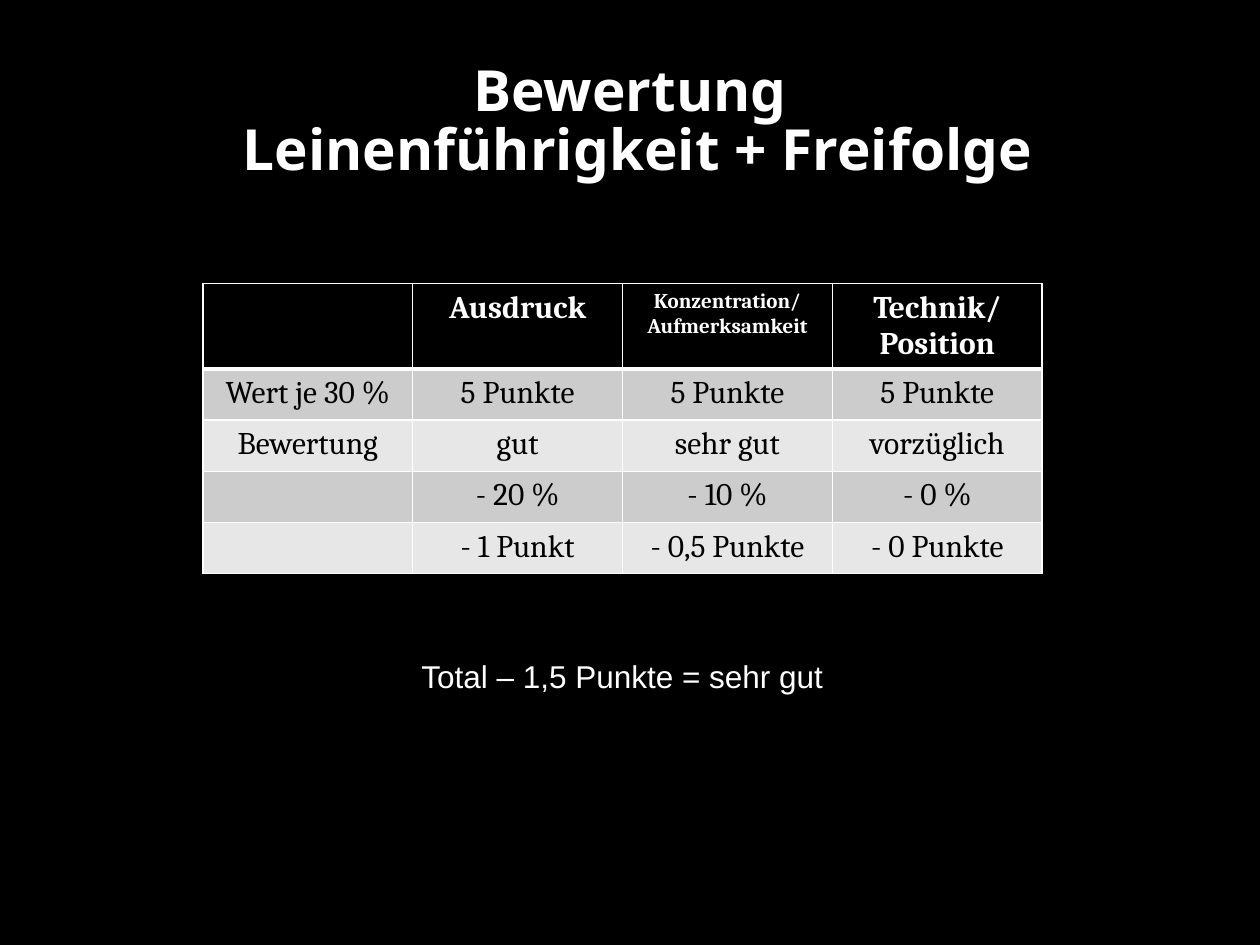
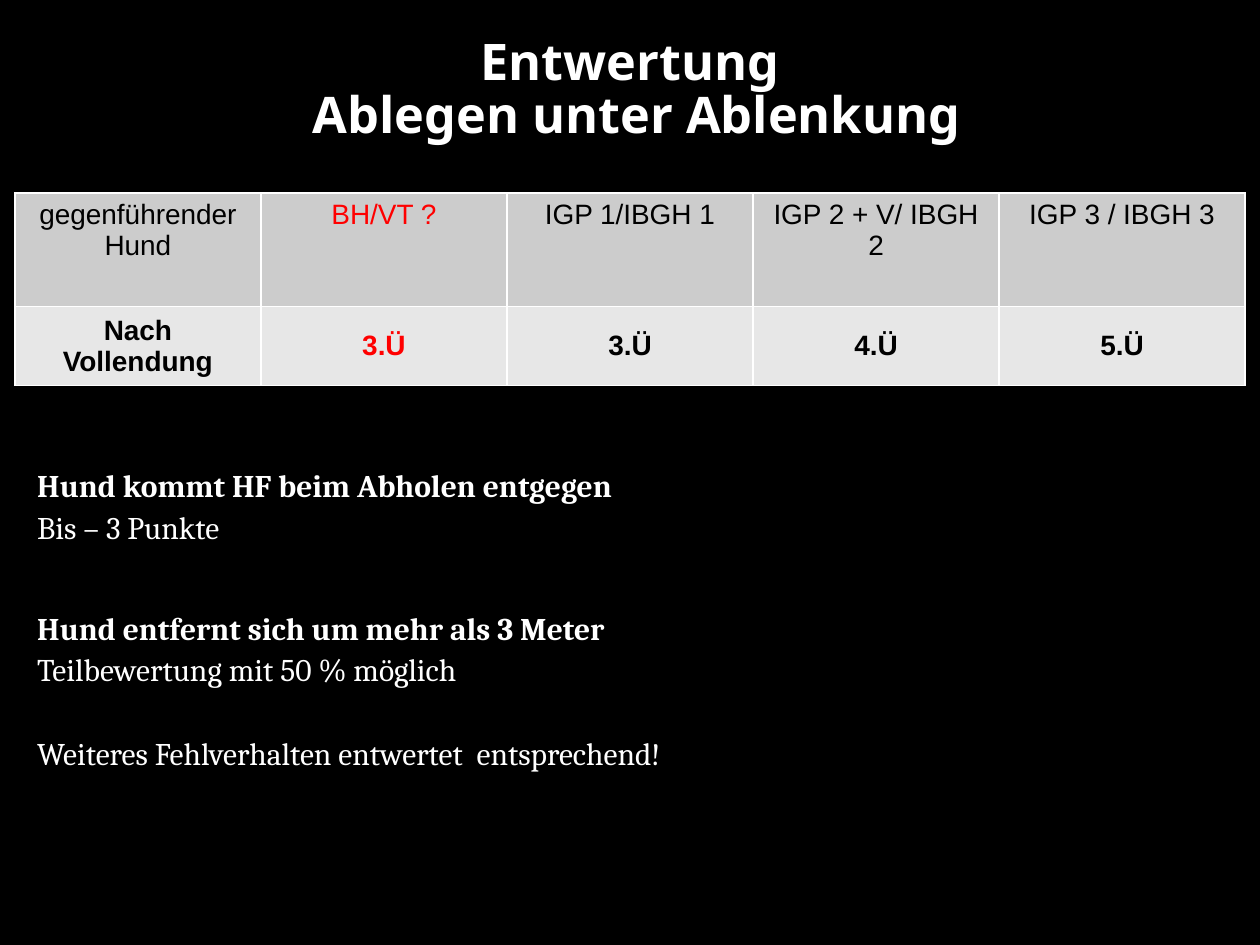
from pptx import Presentation
from pptx.dml.color import RGBColor
from pptx.enum.text import MSO_ANCHOR, MSO_AUTO_SIZE, PP_ALIGN
from pptx.oxml import parse_xml
from pptx.oxml.ns import nsdecls
from pptx.util import Cm, Pt

# Shared look
COLORS = {"black": "000000", "white": "FFFFFF", "red": "FF0000",
          "band_dark": "CCCCCC", "band_light": "E7E7E7"}
SANS, SERIF, TITLE_FONT = "Arial", "Cambria", "Noto Sans"

# Content: scoring of heeling
SCORING_TITLE = "Bewertung\v Leinenführigkeit + Freifolge"
SCORING_ROWS = [
    ["", "Ausdruck", "Konzentration/\nAufmerksamkeit", "Technik/\nPosition"],
    ["Wert je 30 %", "5 Punkte", "5 Punkte", "5 Punkte"],
    ["Bewertung", "gut", "sehr gut", "vorzüglich"],
    ["", "- 20 %", "- 10 %", "- 0 %"],
    ["", "- 1 Punkt", "- 0,5 Punkte", "- 0 Punkte"],
]
SCORING_TOTAL = "Total – 1,5 Punkte = sehr gut"

# Content: devaluation of the down under distraction
DOWN_TITLE = "Entwertung\v Ablegen unter Ablenkung"
DOWN_ROWS = [
    ["gegenführender Hund", "BH/VT ?", "IGP 1/IBGH 1", "IGP 2 + V/ IBGH 2",
     "IGP 3 / IBGH 3"],
    ["Nach Vollendung", "3.Ü", "3.Ü", "4.Ü", "5.Ü"],
]
DOWN_RED_COLUMN = 1
DOWN_FAULTS = [  # text, bold, space before in points
    ("Hund kommt HF beim Abholen entgegen", True, 0),
    ("Bis – 3 Punkte", False, 0),
    ("Hund entfernt sich um mehr als 3 Meter", True, 34),
    ("Teilbewertung mit 50 % möglich", False, 0),
    ("Weiteres Fehlverhalten entwertet  entsprechend!", False, 24),
]


def rgb(name):
    return RGBColor.from_string(COLORS[name])


def style(p, font, size, color, bold=False, align=PP_ALIGN.CENTER):
    p.alignment = align
    p.font.name = font
    p.font.size = Pt(size)
    p.font.bold = bold
    p.font.color.rgb = rgb(color)


def add_titled_slide(prs, title, top, size):
    s = prs.slides.add_slide(prs.slide_layouts[5])
    sp = s.shapes.title
    sp.left, sp.top, sp.width, sp.height = Cm(1.27), Cm(top), Cm(22.86), Cm(3.18)
    tf = sp.text_frame
    tf.text = title
    tf.vertical_anchor = MSO_ANCHOR.MIDDLE
    tf.auto_size = MSO_AUTO_SIZE.NONE
    p = tf.paragraphs[0]
    style(p, TITLE_FONT, size, "white", bold=True)
    p.line_spacing = 0.88
    return s


def set_borders(cell, top=1, bottom=1):
    tc_pr = cell._tc.get_or_add_tcPr()
    widths = {"lnL": 1, "lnR": 1, "lnT": top, "lnB": bottom}
    for i, (side, width) in enumerate(widths.items()):
        tc_pr.insert(i, parse_xml(
            f'<a:{side} {nsdecls("a")} w="{Pt(width)}"><a:solidFill>'
            f'<a:srgbClr val="{COLORS["white"]}"/></a:solidFill></a:{side}>'))


def add_grid(s, rows, left, top, col_width, row_heights, look):
    """Draw rows as a table; look(row, col) gives fill, text style, borders, anchor."""
    n_cols = len(rows[0])
    table = s.shapes.add_table(len(rows), n_cols, Cm(left), Cm(top),
                               Cm(col_width * n_cols), Cm(sum(row_heights))).table
    for column in table.columns:
        column.width = Cm(col_width)
    for r, (texts, height) in enumerate(zip(rows, row_heights)):
        table.rows[r].height = Cm(height)
        for c, text in enumerate(texts):
            fill, font, borders, anchor = look(r, c)
            cell = table.cell(r, c)
            cell.text = text
            cell.vertical_anchor = anchor
            cell.fill.solid()
            cell.fill.fore_color.rgb = rgb(fill)
            set_borders(cell, **borders)
            for p in cell.text_frame.paragraphs:
                style(p, **font)


def scoring_look(r, c):
    if r == 0:
        font = dict(font=SERIF, size=12 if c == 2 else 18, color="white", bold=True)
        return "black", font, {"bottom": 3}, MSO_ANCHOR.TOP
    fill = "band_dark" if r % 2 else "band_light"
    borders = {"top": 3} if r == 1 else {}
    return fill, dict(font=SERIF, size=18, color="black"), borders, MSO_ANCHOR.TOP


def down_look(r, c):
    color = "red" if c == DOWN_RED_COLUMN else "black"
    font = dict(font=SANS, size=16, color=color, bold=r == 1)
    if r == 0:
        return "band_dark", font, {}, MSO_ANCHOR.TOP
    return "band_light", font, {}, MSO_ANCHOR.MIDDLE


def add_text(s, left, top, width, height, wrap):
    tf = s.shapes.add_textbox(Cm(left), Cm(top), Cm(width), Cm(height)).text_frame
    tf.word_wrap = wrap
    return tf


def build_scoring(prs):
    s = add_titled_slide(prs, SCORING_TITLE, top=0.89, size=32.4)
    add_grid(s, SCORING_ROWS, 4.09, 5.72, 4.23, [1.71] + [1.03] * 4, scoring_look)
    tf = add_text(s, 8.2, 13.13, 8.69, 1.02, wrap=False)
    tf.text = SCORING_TOTAL
    style(tf.paragraphs[0], SANS, 18, "white")


def build_down(prs):
    s = add_titled_slide(prs, DOWN_TITLE, top=0.25, size=28.8)
    add_grid(s, DOWN_ROWS, 0.3, 3.89, 4.96, [2.29, 1.59], down_look)
    tf = add_text(s, 0.5, 9.2, 24.6, 6.57, wrap=True)
    tf.text = "\n".join(text for text, _, _ in DOWN_FAULTS)
    for p, (_, bold, gap) in zip(tf.paragraphs, DOWN_FAULTS):
        style(p, SERIF, 18, "white", bold, PP_ALIGN.LEFT)
        p.line_spacing = 1.1
        p.space_before = Pt(gap)


def main():
    prs = Presentation()
    prs.slide_width, prs.slide_height = Cm(25.4), Cm(19.05)
    background = prs.slide_master.background.fill
    background.solid()
    background.fore_color.rgb = rgb("black")
    build_scoring(prs)
    build_down(prs)
    prs.save("out.pptx")


if __name__ == "__main__":
    main()
